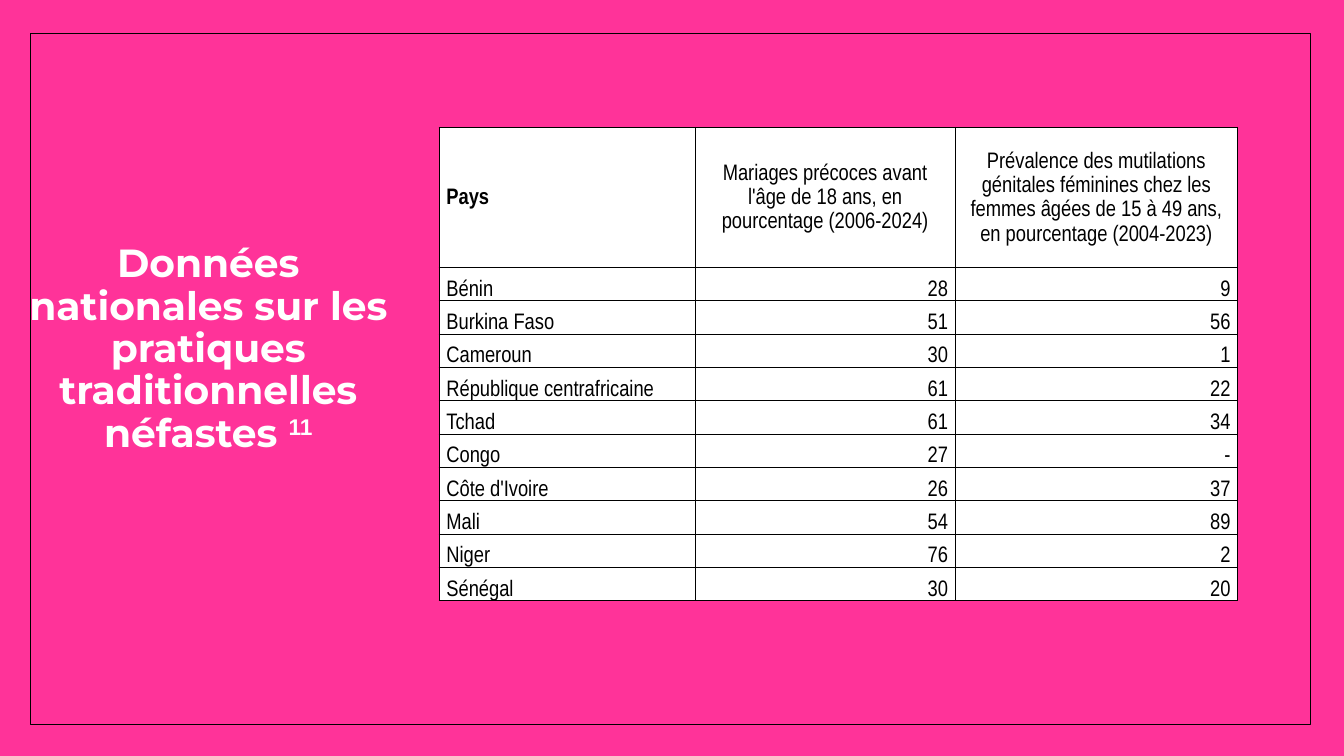
from lxml.etree import SubElement
from pptx import Presentation
from pptx.dml.color import RGBColor
from pptx.enum.shapes import MSO_SHAPE
from pptx.enum.text import MSO_ANCHOR, PP_ALIGN
from pptx.oxml.ns import qn
from pptx.util import Cm, Pt

PINK, WHITE, BLACK = "FF3399", "FFFFFF", "000000"
HEADERS = (
    "Pays",
    "Mariages précoces avant l'âge de 18 ans, en pourcentage (2006-2024)",
    "Prévalence des mutilations génitales féminines chez les femmes "
    "âgées de 15 à 49 ans, en pourcentage (2004-2023)",
)
COUNTRIES = (
    ("Bénin", "28", "9"),
    ("Burkina Faso", "51", "56"),
    ("Cameroun", "30", "1"),
    ("République centrafricaine", "61", "22"),
    ("Tchad", "61", "34"),
    ("Congo", "27", "-"),
    ("Côte d'Ivoire", "26", "37"),
    ("Mali", "54", "89"),
    ("Niger", "76", "2"),
    ("Sénégal", "30", "20"),
)
COLUMN_WIDTHS = (6.45, 6.55, 7.12)
HEADER_HEIGHT, ROW_HEIGHT = 3.53, 0.84


def paint(target, color):
    """Give a fill a solid colour."""
    target.solid()
    target.fore_color.rgb = RGBColor.from_string(color)


def add_span(para, text, font="Arial Narrow", size=16, color=BLACK, bold=False, baseline=None):
    """Add a formatted run to a paragraph."""
    span = para.add_run()
    span.text = text
    span.font.name = font
    span.font.size = Pt(size)
    span.font.bold = bold
    span.font.color.rgb = RGBColor.from_string(color)
    if baseline:
        span.font._element.set("baseline", str(baseline * 1000))


def add_frame(page):
    """Draw the thin outline around the page."""
    frame = page.shapes.add_shape(MSO_SHAPE.RECTANGLE, Cm(0.76), Cm(0.84), Cm(32.26), Cm(17.42))
    frame.shadow.inherit = False
    frame.fill.background()
    paint(frame.line.fill, BLACK)
    frame.line.width = Pt(0.75)


def add_title(page, text, note):
    """Write the title with its raised note number."""
    box = page.shapes.add_textbox(Cm(0.41), Cm(6.02), Cm(9.68), Cm(7.16))
    box.text_frame.word_wrap = True
    para = box.text_frame.paragraphs[0]
    para.alignment = PP_ALIGN.CENTER
    para.line_spacing = 0.9
    add_span(para, text, font="Montserrat", size=28, color=WHITE, bold=True)
    add_span(para, note, font="Arial", size=28, color=WHITE, bold=True, baseline=30)


def add_borders(cell):
    """Draw black lines on the four sides of a cell."""
    properties = cell._tc.get_or_add_tcPr()
    for place, side in enumerate(("a:lnL", "a:lnR", "a:lnT", "a:lnB")):
        line = SubElement(properties, qn(side), w=str(Pt(1)))
        fill = SubElement(line, qn("a:solidFill"))
        SubElement(fill, qn("a:srgbClr"), val=BLACK)
        properties.insert(place, line)


def fill_cell(cell, text, align=PP_ALIGN.LEFT, anchor=MSO_ANCHOR.BOTTOM, bold=False):
    """Write and format one table cell."""
    cell.margin_left = cell.margin_right = Cm(0.18)
    cell.margin_top = cell.margin_bottom = 0
    cell.vertical_anchor = anchor
    paint(cell.fill, WHITE)
    add_borders(cell)
    para = cell.text_frame.paragraphs[0]
    para.alignment = align
    para.line_spacing = 1.15
    para.space_after = Pt(8)
    add_span(para, text, bold=bold)


def add_data_table(page):
    """Build the table of figures by country."""
    height = HEADER_HEIGHT + ROW_HEIGHT * len(COUNTRIES)
    table = page.shapes.add_table(
        len(COUNTRIES) + 1, len(HEADERS),
        Cm(11.07), Cm(3.21), Cm(sum(COLUMN_WIDTHS)), Cm(height),
    ).table
    table.horz_banding = table.first_row = False
    for column, width in zip(table.columns, COLUMN_WIDTHS):
        column.width = Cm(width)
    for row in table.rows:
        row.height = Cm(ROW_HEIGHT)
    table.rows[0].height = Cm(HEADER_HEIGHT)
    for index, text in enumerate(HEADERS):
        align = PP_ALIGN.CENTER if index else PP_ALIGN.LEFT
        fill_cell(table.cell(0, index), text, align=align, anchor=MSO_ANCHOR.MIDDLE, bold=index == 0)
    for number, values in enumerate(COUNTRIES, start=1):
        for index, text in enumerate(values):
            align = PP_ALIGN.RIGHT if index else PP_ALIGN.LEFT
            fill_cell(table.cell(number, index), text, align=align)


def main():
    """Build and save the deck."""
    deck = Presentation()
    deck.slide_width, deck.slide_height = Cm(33.87), Cm(19.05)
    page = deck.slides.add_slide(deck.slide_layouts[6])
    paint(page.background.fill, PINK)
    add_frame(page)
    add_title(page, "Données nationales sur les pratiques traditionnelles néfastes ", "11")
    add_data_table(page)
    deck.save("out.pptx")


if __name__ == "__main__":
    main()
